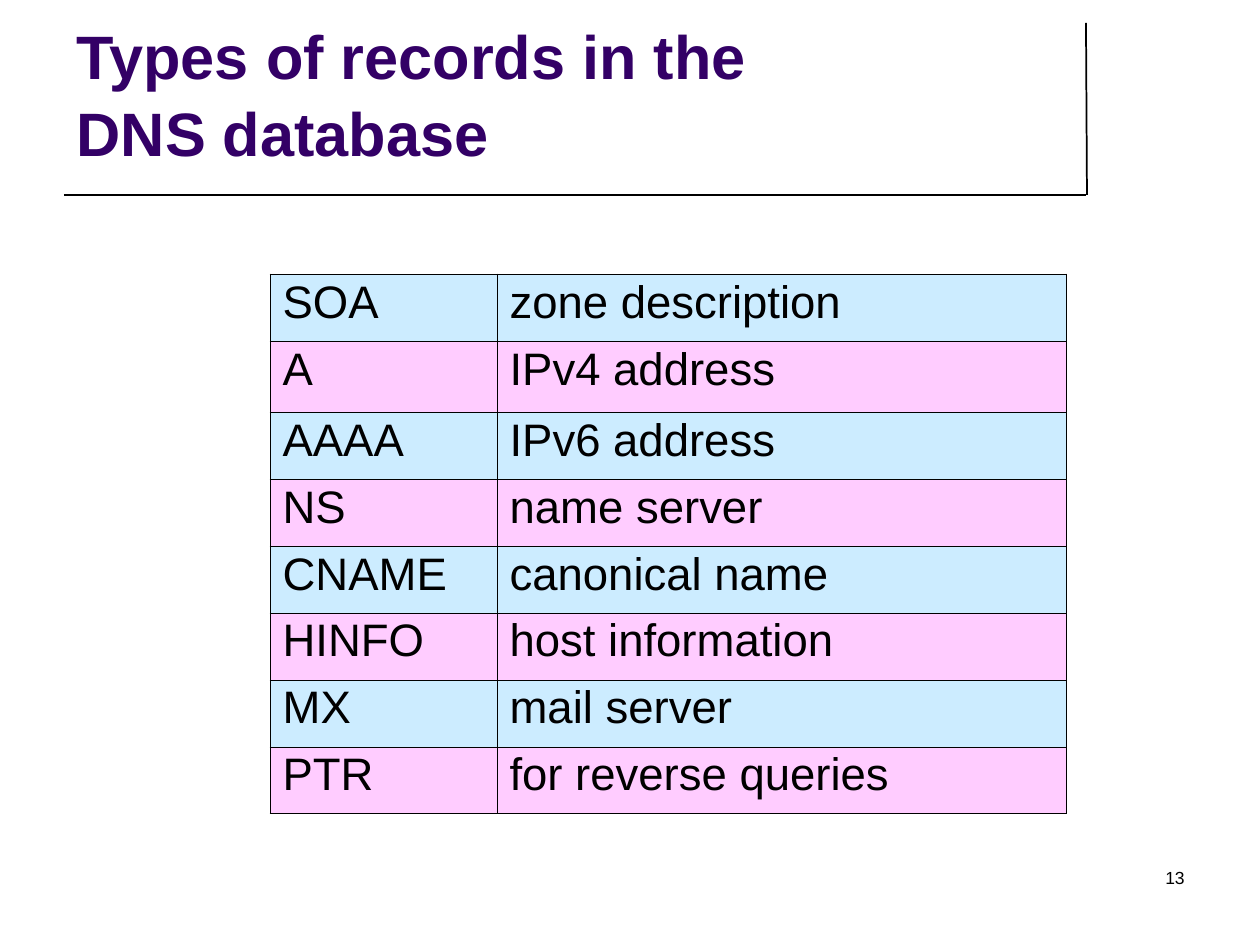
"""Build the slide listing the record types in the DNS database."""
from lxml import etree
from pptx import Presentation
from pptx import util as u
from pptx.dml.color import RGBColor
from pptx.enum import shapes, text
from pptx.oxml.ns import qn

SCALE = 914400 / 126
BLACK = RGBColor(0x00, 0x00, 0x00)
PURPLE = RGBColor(0x33, 0x00, 0x66)
BLUE = RGBColor(0xCC, 0xEC, 0xFF)
PINK = RGBColor(0xFF, 0xCC, 0xFF)
RECORDS = [
    ("SOA", "zone description"),
    ("A", "IPv4 address"),
    ("AAAA", "IPv6 address"),
    ("NS", "name server"),
    ("CNAME", "canonical name"),
    ("HINFO", "host information"),
    ("MX", "mail server"),
    ("PTR", "for reverse queries"),
]
COLUMN_WIDTHS = [227, 569]
ROW_HEIGHTS = [67, 71] + [67] * 6


def px(*lengths):
    return [u.Emu(round(length * SCALE)) for length in lengths]


def format_text(frame, size, color, bold=False, **paragraph_values):
    values = {"name": "Arial", "size": u.Pt(size), "bold": bold}
    for paragraph in frame.paragraphs:
        for name, value in paragraph_values.items():
            setattr(paragraph, name, value)
        for run in paragraph.runs:
            for name, value in values.items():
                setattr(run.font, name, value)
            run.font.color.rgb = color


presentation = Presentation()
presentation.slide_width, presentation.slide_height = px(1260, 945)
slide = presentation.slides.add_slide(presentation.slide_layouts[5])

title = slide.shapes.title
title.left, title.top, title.width, title.height = px(64, 16, 1022, 159)
frame = title.text_frame
frame.text = "Types of records in the\nDNS database"
frame.word_wrap = True
frame.auto_size = text.MSO_AUTO_SIZE.NONE
frame.vertical_anchor = text.MSO_ANCHOR.BOTTOM
format_text(frame, 35, PURPLE, bold=True, alignment=text.PP_ALIGN.LEFT)
frame.paragraphs[1].space_before = u.Pt(2)

for ends in [(1086, 23, 1087, 195), (64, 195, 1086, 195)]:
    rule = slide.shapes.add_connector(shapes.MSO_CONNECTOR.STRAIGHT, *px(*ends))
    rule.line.color.rgb = BLACK
    rule.line.width = u.Pt(1)
    etree.SubElement(rule.element.spPr, qn("a:effectLst"))

number_box = slide.shapes.add_textbox(*px(903, 861, 294, 63))
number_box.text_frame.word_wrap = True
number_box.text_frame.text = "13"
format_text(number_box.text_frame, 10, BLACK, alignment=text.PP_ALIGN.RIGHT)

table = slide.shapes.add_table(
    len(RECORDS), len(COLUMN_WIDTHS),
    *px(270, 274, sum(COLUMN_WIDTHS), sum(ROW_HEIGHTS)),
).table
for column, width in zip(table.columns, px(*COLUMN_WIDTHS)):
    column.width = width
for row, height in zip(table.rows, px(*ROW_HEIGHTS)):
    row.height = height

for i, record in enumerate(RECORDS):
    for j, label in enumerate(record):
        cell = table.cell(i, j)
        cell.text = label
        format_text(cell.text_frame, 26, BLACK, line_spacing=0.93)
        outer_edges = {
            "a:lnL": j == 0,
            "a:lnR": j == len(record) - 1,
            "a:lnT": i == 0,
            "a:lnB": i == len(RECORDS) - 1,
        }
        properties = cell._tc.get_or_add_tcPr()
        for tag, outer in outer_edges.items():
            width = u.Pt(0.5 if outer else 0.23)
            border = etree.SubElement(properties, qn(tag), w=str(width))
            fill = etree.SubElement(border, qn("a:solidFill"))
            etree.SubElement(fill, qn("a:srgbClr"), val=str(BLACK))
        cell.fill.solid()
        cell.fill.fore_color.rgb = PINK if i % 2 else BLUE

presentation.save("out.pptx")
